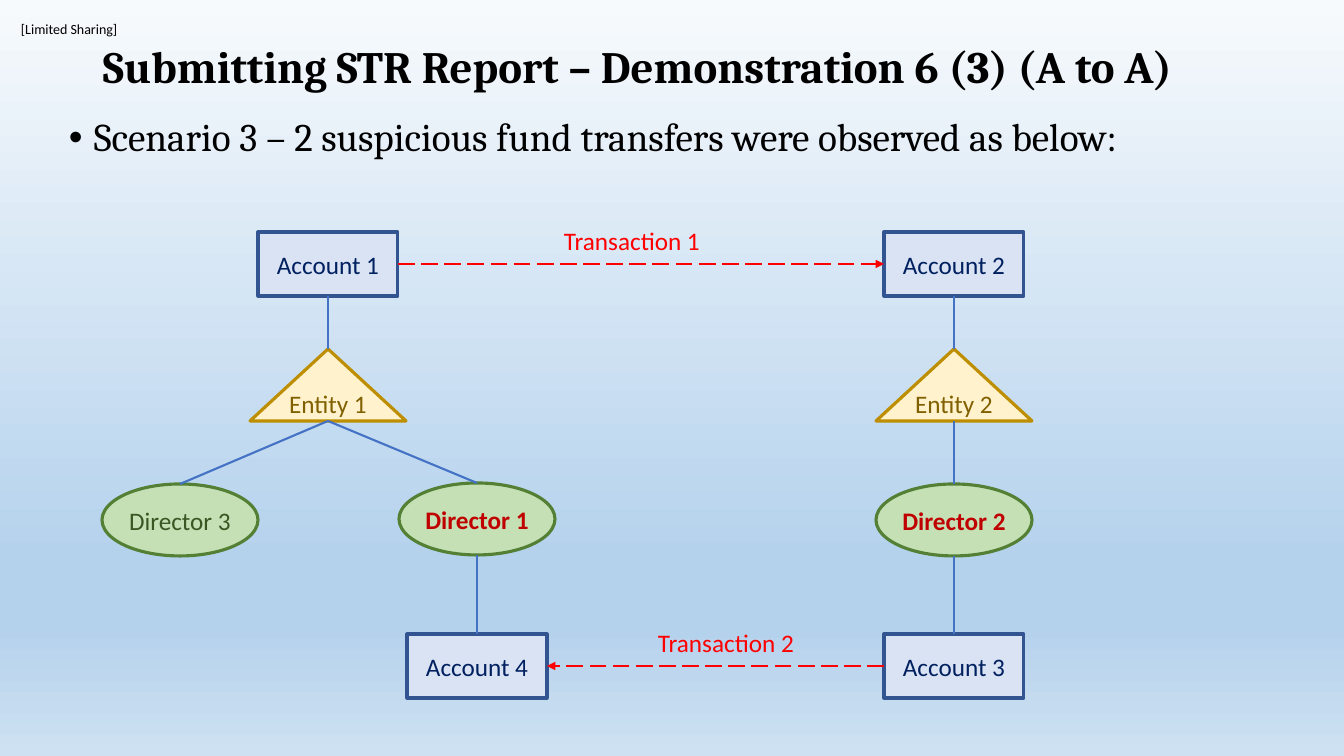
from lxml.etree import SubElement
from pptx import Presentation
from pptx.dml.color import RGBColor
from pptx.enum.dml import MSO_LINE
from pptx.enum.shapes import MSO_CONNECTOR, MSO_SHAPE
from pptx.enum.text import MSO_ANCHOR, MSO_AUTO_SIZE, PP_ALIGN
from pptx.oxml.ns import qn
from pptx.util import Emu, Pt

SLIDE_W, SLIDE_H = 1344, 756
EMU_PER_PX = 12192000 / SLIDE_W

BLACK = RGBColor(0x00, 0x00, 0x00)
RED = RGBColor(0xFF, 0x00, 0x00)
DARK_RED = RGBColor(0xC0, 0x00, 0x00)
LINK_BLUE = RGBColor(0x44, 0x72, 0xC4)
ACCOUNT_FILL = RGBColor(0xDA, 0xE3, 0xF3)
ACCOUNT_EDGE = RGBColor(0x32, 0x54, 0x91)
ACCOUNT_TEXT = RGBColor(0x00, 0x20, 0x60)
ENTITY_FILL = RGBColor(0xFF, 0xF2, 0xCC)
ENTITY_EDGE = RGBColor(0xBD, 0x8E, 0x00)
ENTITY_TEXT = RGBColor(0x80, 0x60, 0x00)
DIRECTOR_FILL = RGBColor(0xC5, 0xE0, 0xB4)
DIRECTOR_EDGE = RGBColor(0x53, 0x80, 0x35)
DIRECTOR_TEXT = RGBColor(0x38, 0x57, 0x23)
SKY_STOPS = [
    (0, RGBColor(0xF7, 0xFA, 0xFD)),
    (74, RGBColor(0xB5, 0xD2, 0xEC)),
    (83, RGBColor(0xB5, 0xD2, 0xEC)),
    (100, RGBColor(0xCE, 0xE1, 0xF2)),
]

# Node styles: preset, width, height, fill, edge, text colour
ACCOUNT = (MSO_SHAPE.RECTANGLE, 140, 64, ACCOUNT_FILL, ACCOUNT_EDGE, ACCOUNT_TEXT)
ENTITY = (MSO_SHAPE.ISOSCELES_TRIANGLE, 156, 72, ENTITY_FILL, ENTITY_EDGE, ENTITY_TEXT)
DIRECTOR = (MSO_SHAPE.OVAL, 156, 72, DIRECTOR_FILL, DIRECTOR_EDGE, DIRECTOR_TEXT)


def px(value):
    return Emu(round(value * EMU_PER_PX))


def paint_background(slide):
    fill = slide.background.fill
    fill.gradient()
    fill.gradient_angle = 270
    stops = slide.background._cSld.find(".//" + qn("a:gsLst"))
    stops.clear()
    for percent, color in SKY_STOPS:
        stop = SubElement(stops, qn("a:gs"), pos=str(percent * 1000))
        SubElement(stop, qn("a:srgbClr"), val=str(color))


def clear_insets(frame):
    frame.margin_left = frame.margin_right = 0
    frame.margin_top = frame.margin_bottom = 0


def write(frame, text, size, color, font="Calibri", bold=False):
    frame.text = text
    paragraph = frame.paragraphs[0]
    letters = paragraph.runs[0].font
    letters.name, letters.size, letters.bold = font, Pt(size), bold
    letters.color.rgb = color
    return paragraph


def add_text(slide, box, text, size, color, wrap=False, **style):
    frame = slide.shapes.add_textbox(*map(px, box)).text_frame
    frame.word_wrap = wrap
    return frame, write(frame, text, size, color, **style)


def add_bullet(paragraph, indent):
    properties = paragraph._p.get_or_add_pPr()
    properties.set("marL", str(px(indent)))
    properties.set("indent", str(-px(indent)))
    SubElement(properties, qn("a:buFont"), typeface="Arial")
    SubElement(properties, qn("a:buChar"), char="•")


def add_node(slide, style, text, center_x, center_y, flagged=False):
    preset, width, height, fill, edge, color = style
    box = (center_x - width // 2, center_y - height // 2, width, height)
    node = slide.shapes.add_shape(preset, *map(px, box))
    node.shadow.inherit = False
    node.fill.solid()
    node.fill.fore_color.rgb = fill
    node.line.color.rgb = edge
    node.line.width = Pt(2.25)
    frame = node.text_frame
    frame.vertical_anchor = MSO_ANCHOR.MIDDLE
    if style is not ACCOUNT:
        clear_insets(frame)
    label = write(frame, text, 18, DARK_RED if flagged else color, bold=flagged)
    label.alignment = PP_ALIGN.CENTER
    return node


def add_line(slide, start, end, color):
    line = slide.shapes.add_connector(MSO_CONNECTOR.STRAIGHT, *start, *end)
    line.line.color.rgb = color
    line.line.width = Pt(1.5)
    SubElement(line._element.spPr, qn("a:effectLst"))
    return line


def add_link(slide, upper, lower):
    """Join the bottom middle of one node to the top middle of another."""
    start = (upper.left + upper.width // 2, upper.top + upper.height)
    end = (lower.left + lower.width // 2, lower.top)
    add_line(slide, start, end, LINK_BLUE)


def add_transfer(slide, sender, receiver, text, label_x):
    """Dashed red arrow between the facing sides of two accounts."""
    y = sender.top + sender.height // 2
    if sender.left < receiver.left:
        start_x, end_x = sender.left + sender.width, receiver.left
    else:
        start_x, end_x = sender.left, receiver.left + receiver.width
    arrow = add_line(slide, (start_x, y), (end_x, y), RED)
    arrow.line.dash_style = MSO_LINE.LONG_DASH
    SubElement(arrow.line._get_or_add_ln(), qn("a:tailEnd"), type="triangle")
    label_y = round(y / EMU_PER_PX) - 44
    frame, _ = add_text(slide, (label_x, label_y, 158, 40), text, 18, RED)
    frame.auto_size = MSO_AUTO_SIZE.SHAPE_TO_FIT_TEXT


def add_headings(slide):
    marking, _ = add_text(slide, (21, 21, 100, 17), "[Limited Sharing]", 10, BLACK)
    clear_insets(marking)

    title, heading = add_text(
        slide, (93, 25, 1208, 88),
        "Submitting STR Report – Demonstration 6 (3) (A to A)",
        32, BLACK, wrap=True, font="Cambria", bold=True)
    title.vertical_anchor = MSO_ANCHOR.MIDDLE
    heading.line_spacing = 0.9

    _, scenario = add_text(
        slide, (59, 113, 1240, 632),
        "Scenario 3 – 2 suspicious fund transfers were observed as below:",
        28, BLACK, wrap=True, font="Cambria")
    scenario.alignment = PP_ALIGN.JUSTIFY
    scenario.line_spacing = 0.9
    scenario.space_before = Pt(10)
    add_bullet(scenario, 25)


def add_diagram(slide):
    # Column centres and row centres
    far_left, left, middle, right = 180, 328, 477, 954
    top_row, entity_row, director_row, bottom_row = 264, 385, 520, 666

    # Accounts, entities and directors
    account_1 = add_node(slide, ACCOUNT, "Account 1", left, top_row)
    account_2 = add_node(slide, ACCOUNT, "Account 2", right, top_row)
    account_3 = add_node(slide, ACCOUNT, "Account 3", right, bottom_row)
    account_4 = add_node(slide, ACCOUNT, "Account 4", middle, bottom_row)
    entity_1 = add_node(slide, ENTITY, "Entity 1", left, entity_row)
    entity_2 = add_node(slide, ENTITY, "Entity 2", right, entity_row)
    director_3 = add_node(slide, DIRECTOR, "Director 3", far_left, director_row)
    director_1 = add_node(slide, DIRECTOR, "Director 1", middle, director_row - 1, True)
    director_2 = add_node(slide, DIRECTOR, "Director 2", right, director_row, True)

    # Ownership links
    for upper, lower in [
        (account_1, entity_1), (entity_1, director_3), (entity_1, director_1),
        (account_2, entity_2), (entity_2, director_2),
        (director_2, account_3), (director_1, account_4),
    ]:
        add_link(slide, upper, lower)

    # Fund transfers
    add_transfer(slide, account_1, account_2, "Transaction 1", 554)
    add_transfer(slide, account_3, account_4, "Transaction 2", 648)


def main():
    deck = Presentation()
    deck.slide_width, deck.slide_height = px(SLIDE_W), px(SLIDE_H)
    slide = deck.slides.add_slide(deck.slide_layouts[6])
    paint_background(slide)
    add_headings(slide)
    add_diagram(slide)
    deck.save("out.pptx")


if __name__ == "__main__":
    main()
